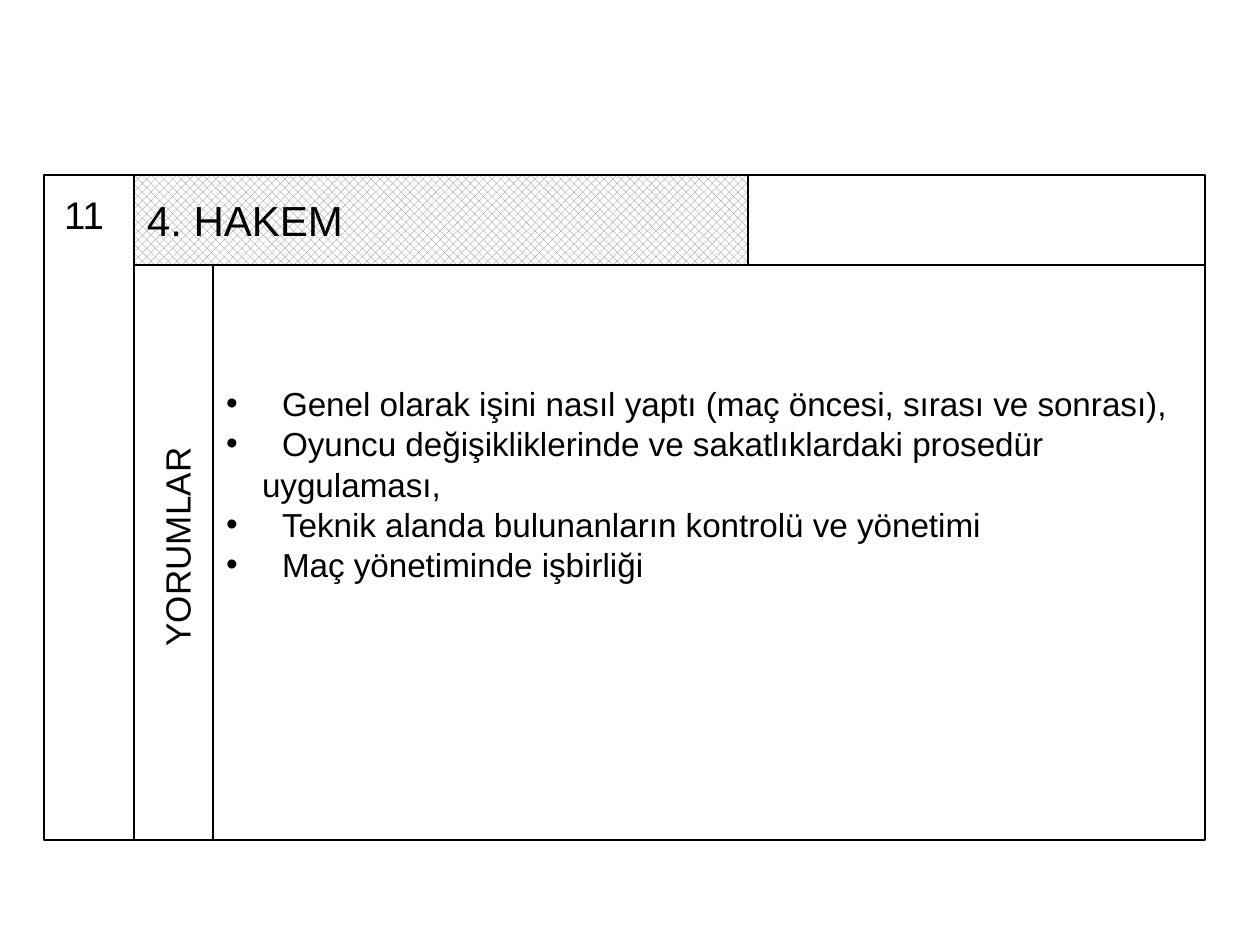
"""Builds a one-page referee evaluation form slide."""
from lxml import etree
from pptx import Presentation
from pptx.dml.color import RGBColor
from pptx.enum.dml import MSO_PATTERN
from pptx.enum.shapes import MSO_SHAPE
from pptx.enum.text import MSO_ANCHOR, MSO_AUTO_SIZE, PP_ALIGN
from pptx.oxml.ns import qn
from pptx.util import Emu, Pt

NUMBER = "11"
TITLE = "4. HAKEM"
SIDE_LABEL = "YORUMLAR"
COMMENTS = [
    (True, "Genel olarak işini nasıl yaptı (maç öncesi, sırası ve sonrası),"),
    (True, "Oyuncu değişikliklerinde ve sakatlıklardaki prosedür"),
    (False, "uygulaması,"),
    (True, "Teknik alanda bulunanların kontrolü ve yönetimi"),
    (True, "Maç yönetiminde işbirliği"),
]

BLACK = RGBColor(0x00, 0x00, 0x00)
WHITE = RGBColor(0xFF, 0xFF, 0xFF)
GRAY = RGBColor(0x80, 0x80, 0x80)
FONT = "Arial"
RECTANGLE = MSO_SHAPE.RECTANGLE
CENTER, LEFT = PP_ALIGN.CENTER, PP_ALIGN.LEFT
TOP, MIDDLE = MSO_ANCHOR.TOP, MSO_ANCHOR.MIDDLE
NO_AUTOFIT = MSO_AUTO_SIZE.NONE
HATCH = MSO_PATTERN.PERCENT_50

NUMBER_X, LABEL_X, COMMENTS_X, EMPTY_X, RIGHT = 44, 134, 213, 748, 1205
HEADER_Y, BODY_Y, BOTTOM = 175, 265, 840
BULLET_INDENT, CONTINUATION_INDENT = 56, 36


def px(value):
    return Emu(round(value * 914400 / 126))


def place(shape, left, top, right, bottom):
    shape.left, shape.top = px(left), px(top)
    shape.width, shape.height = px(right - left), px(bottom - top)


def outline(shape):
    shape.line.color.rgb = BLACK
    shape.line.width = Pt(0.75)


def add_cell(slide, left, top, right, bottom):
    cell = slide.shapes.add_shape(RECTANGLE, 0, 0, 0, 0)
    place(cell, left, top, right, bottom)
    cell.shadow.inherit = False
    cell.fill.solid()
    cell.fill.fore_color.rgb = WHITE
    outline(cell)


def set_insets(frame, top, side=13):
    frame.margin_left = frame.margin_right = px(side)
    frame.margin_top, frame.margin_bottom = px(top), px(6)


def style(paragraph, size, alignment):
    paragraph.alignment = alignment
    paragraph.font.name = FONT
    paragraph.font.size = Pt(size)
    paragraph.font.color.rgb = BLACK


def add_label(slide, text, size, box, rotation=0):
    label = slide.shapes.add_textbox(0, 0, 0, 0)
    place(label, *box)
    label.rotation = rotation
    frame = label.text_frame
    frame.word_wrap = True
    set_insets(frame, 6, 6)
    frame.text = text
    style(frame.paragraphs[0], size, CENTER)


def set_bullet(paragraph, bulleted):
    properties = paragraph._p.get_or_add_pPr()
    margin = BULLET_INDENT if bulleted else CONTINUATION_INDENT
    properties.set("marL", str(px(margin)))
    properties.set("indent", str(px(-margin if bulleted else 0)))
    if bulleted:
        etree.SubElement(properties, qn("a:buFont")).set("typeface", FONT)
        etree.SubElement(properties, qn("a:buChar")).set("char", "•")
    else:
        etree.SubElement(properties, qn("a:buNone"))


def fill_title(title):
    place(title, LABEL_X, HEADER_Y, EMPTY_X, BODY_Y)
    title.fill.patterned()
    title.fill.pattern = HATCH
    title.fill.fore_color.rgb = GRAY
    title.fill.back_color.rgb = WHITE
    outline(title)
    frame = title.text_frame
    frame.auto_size = NO_AUTOFIT
    frame.vertical_anchor = MIDDLE
    set_insets(frame, 6)
    frame.text = TITLE
    style(frame.paragraphs[0], 24, LEFT)


def fill_comments(body):
    place(body, COMMENTS_X, BODY_Y, RIGHT, BOTTOM)
    body.fill.solid()
    body.fill.fore_color.rgb = WHITE
    outline(body)
    frame = body.text_frame
    frame.auto_size = NO_AUTOFIT
    frame.vertical_anchor = TOP
    frame.word_wrap = True
    set_insets(frame, 118)
    frame.text = "\n".join(text for _, text in COMMENTS)
    for paragraph, (bulleted, _) in zip(frame.paragraphs, COMMENTS):
        set_bullet(paragraph, bulleted)
        paragraph.space_before = Pt(0)
        paragraph.line_spacing = Pt(23)
        style(paragraph, 19, LEFT)


def main():
    presentation = Presentation()
    presentation.slide_width, presentation.slide_height = px(1260), px(945)
    slide = presentation.slides.add_slide(presentation.slide_layouts[1])
    fill_title(slide.shapes.title)
    fill_comments(slide.placeholders[1])
    add_cell(slide, NUMBER_X, HEADER_Y, LABEL_X, BOTTOM)
    add_cell(slide, EMPTY_X, HEADER_Y, RIGHT, BODY_Y)
    add_cell(slide, LABEL_X, BODY_Y, COMMENTS_X, BOTTOM)
    add_label(slide, NUMBER, 22, (50, 185, 118, 244))
    add_label(slide, SIDE_LABEL, 20, (23, 520, 330, 574), 270)
    presentation.save("out.pptx")


if __name__ == "__main__":
    main()
